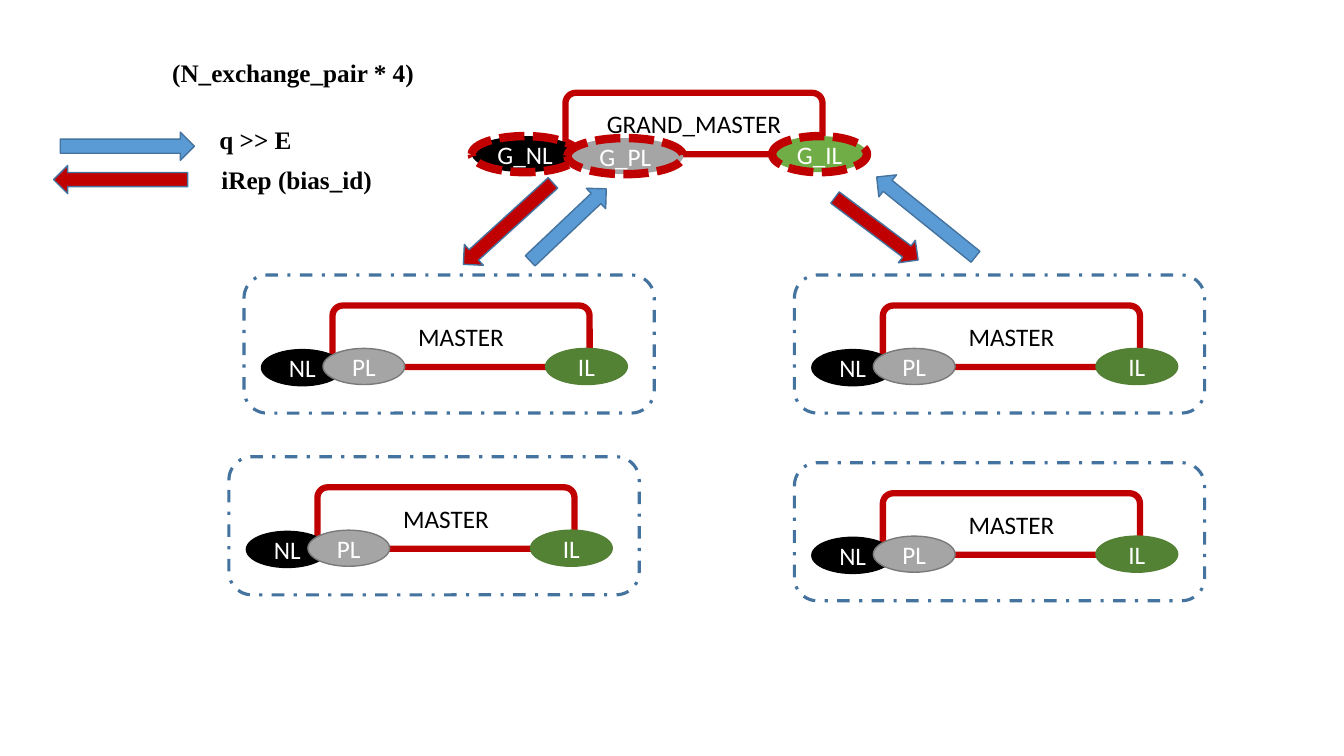
from dataclasses import dataclass

from pptx import Presentation
from pptx.dml.color import RGBColor
from pptx.enum.dml import MSO_LINE
from pptx.enum.shapes import MSO_SHAPE
from pptx.enum.text import MSO_ANCHOR, PP_ALIGN
from pptx.util import Cm, Pt


@dataclass(frozen=True)
class Theme:
    black: str = "000000"
    white: str = "FFFFFF"
    red: str = "C00000"
    blue: str = "5B9BD5"
    blue_edge: str = "43739E"
    gray: str = "A5A5A5"
    gray_edge: str = "7A7A7A"
    light_green: str = "70AD47"
    green: str = "548235"
    green_edge: str = "538035"
    diagram_font: str = "Calibri"
    legend_font: str = "Times New Roman"
    text_size: int = 18
    thin: float = 1
    frame: float = 2.25
    ring: float = 4.5
    thick: float = 6


THEME = Theme()
RING_W, RING_H = 6.48, 1.55
NODE_W, NODE_H = 2.06, 0.91
FRAME_W, FRAME_H = 10.34, 3.48
ARROW_H = 0.71


def style_text(tf, text, font, color, bold=False):
    tf.text = text
    f = tf.paragraphs[0].runs[0].font
    f.name, f.size, f.bold = font, Pt(THEME.text_size), bold
    f.color.rgb = RGBColor.from_string(color)


def add_box(shapes, kind, box, fill, line, width, dash=None, text=None, color=THEME.white):
    """Place a preset shape in box = (left, top, width, height) in cm."""
    sp = shapes.add_shape(kind, *map(Cm, box))
    sp.shadow.inherit = False
    if fill:
        sp.fill.solid()
        sp.fill.fore_color.rgb = RGBColor.from_string(fill)
    else:
        sp.fill.background()
    sp.line.color.rgb = RGBColor.from_string(line)
    sp.line.width = Pt(width)
    if dash:
        sp.line.dash_style = dash
    if text:
        tf = sp.text_frame
        style_text(tf, text, THEME.diagram_font, color)
        tf.word_wrap = False
        tf.vertical_anchor = MSO_ANCHOR.MIDDLE
        tf.margin_left = tf.margin_right = tf.margin_top = tf.margin_bottom = 0
        tf.paragraphs[0].alignment = PP_ALIGN.CENTER
    return sp


def add_ring(shapes, x, y, text):
    add_box(shapes, MSO_SHAPE.ROUNDED_RECTANGLE, (x, y, RING_W, RING_H),
            THEME.white, THEME.red, THEME.ring, text=text, color=THEME.black)


def add_arrow(shapes, x, y, w, angle, color):
    sp = add_box(shapes, MSO_SHAPE.RIGHT_ARROW, (x, y, w, ARROW_H),
                 color, THEME.blue_edge, THEME.thin)
    sp.rotation = angle


def add_label(shapes, x, y, w, text):
    tb = shapes.add_textbox(Cm(x), Cm(y), Cm(w), Cm(1.02))
    style_text(tb.text_frame, text, THEME.legend_font, THEME.black, bold=True)


def add_legend(shapes, x, y):
    """Caption, then the meaning of the two arrow colours."""
    add_label(shapes, x + 2.74, y, 8.46, "(N_exchange_pair * 4)")
    add_arrow(shapes, x + 0.17, y + 2.01, 3.38, 0, THEME.blue)
    add_arrow(shapes, x, y + 2.85, 3.38, 180, THEME.red)
    add_label(shapes, x + 3.93, y + 1.7, 2.34, "q >> E")
    add_label(shapes, x + 3.98, y + 2.69, 4.34, "iRep (bias_id)")


def add_grand_master(shapes, x, y):
    add_ring(shapes, x + 2.36, y, "GRAND_MASTER")
    for name, dx, dy, w, fill in (("G_NL", 0, 1.09, 2.69, THEME.black),
                                  ("G_PL", 2.41, 1.14, 2.92, THEME.gray),
                                  ("G_IL", 7.57, 1.09, 2.39, THEME.light_green)):
        add_box(shapes, MSO_SHAPE.OVAL, (x + dx, y + dy, w, NODE_H), fill,
                THEME.red, THEME.thick, MSO_LINE.SQUARE_DOT, name)


def add_master(shapes, x, y):
    """One grouped master: ring, dashed frame and three nodes."""
    group = shapes.add_group_shape().shapes
    add_ring(group, x + 2.23, y + 0.77, "MASTER")
    add_box(group, MSO_SHAPE.ROUNDED_RECTANGLE, (x, y, FRAME_W, FRAME_H),
            None, THEME.blue_edge, THEME.frame, MSO_LINE.DASH_DOT)
    for name, dx, dy, fill, line in (("NL", 0.44, 1.88, THEME.black, THEME.black),
                                     ("PL", 1.99, 1.85, THEME.gray, THEME.gray_edge),
                                     ("IL", 7.6, 1.85, THEME.green, THEME.green_edge)):
        add_box(group, MSO_SHAPE.OVAL, (x + dx, y + dy, NODE_W, NODE_H),
                fill, line, THEME.thin, text=name)


def add_exchange_arrows(shapes, x, y):
    """Arrows between the grand master and the upper masters."""
    for dx, dy, w, angle, color in ((1.72, 0.2, 2.64, 316.6, THEME.blue),
                                    (10.46, 0, 3.2, 218.9, THEME.blue),
                                    (0, 0.17, 3.05, 137.7, THEME.red),
                                    (9.5, 0.3, 2.62, 36.9, THEME.red)):
        add_arrow(shapes, x + dx, y + dy, w, angle, color)


def main():
    prs = Presentation()
    prs.slide_width, prs.slide_height = Cm(33.87), Cm(19.05)
    s = prs.slides.add_slide(prs.slide_layouts[6])

    add_legend(s.shapes, 1.35, 1.32)
    add_exchange_arrows(s.shapes, 11.28, 5.11)
    add_grand_master(s.shapes, 11.89, 2.34)
    for x, y in ((20.02, 11.66), (20.02, 6.93), (5.77, 11.51), (6.15, 6.93)):
        add_master(s.shapes, x, y)

    prs.save("out.pptx")


if __name__ == "__main__":
    main()
